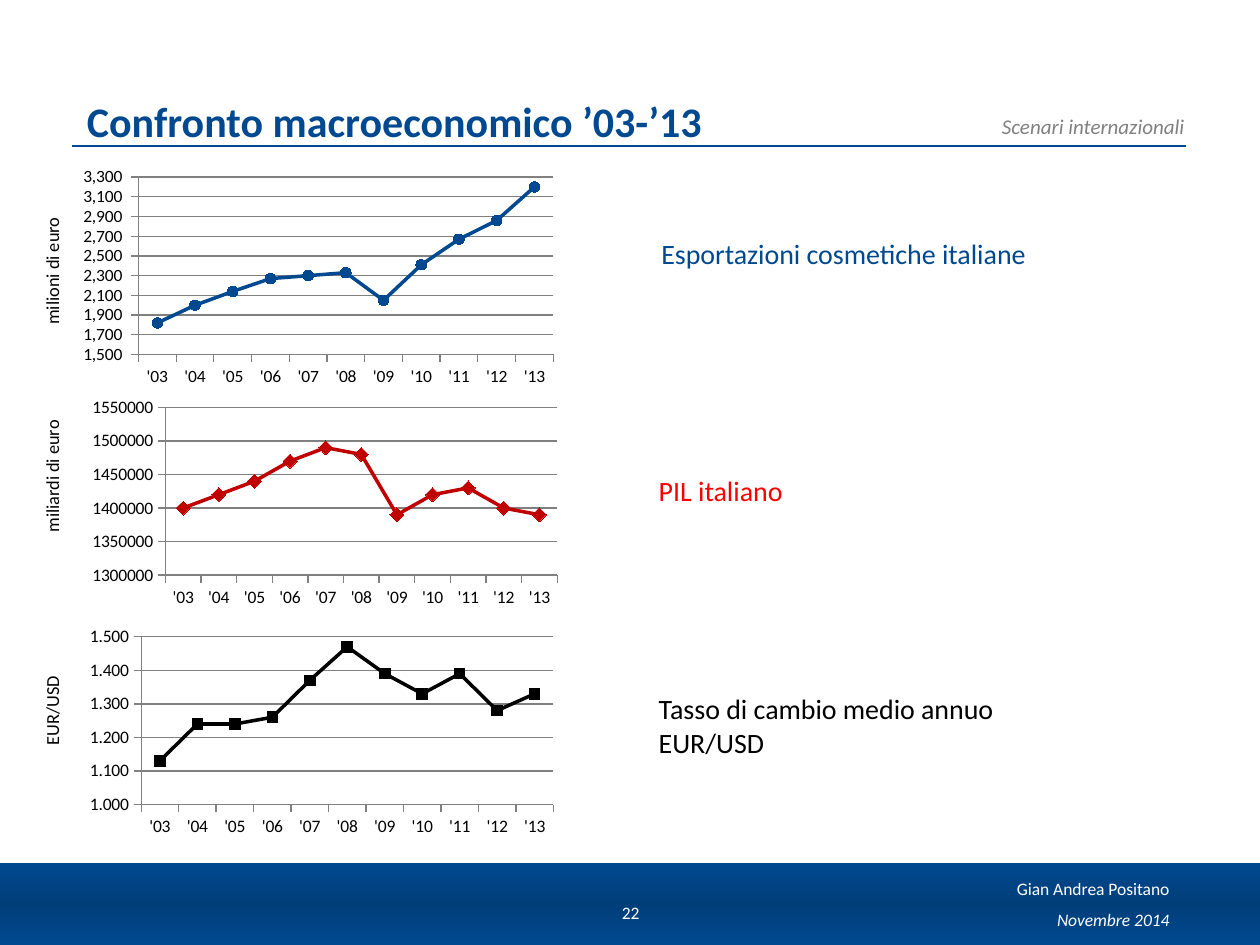
"""Build the slide comparing exports, GDP and exchange rate from 2003 to 2013."""
from copy import deepcopy

from lxml import etree
from pptx import Presentation
from pptx import util as u
from pptx.chart.data import CategoryChartData
from pptx.dml.color import RGBColor
from pptx.enum import chart as charts
from pptx.enum import shapes, text
from pptx.oxml.ns import qn

BLUE = RGBColor(0x00, 0x49, 0x90)
DEEP_BLUE = RGBColor(0x00, 0x3E, 0x79)
GREY = RGBColor(0x80, 0x80, 0x80)
WHITE = RGBColor(0xFF, 0xFF, 0xFF)
BLACK = RGBColor(0x00, 0x00, 0x00)
RED = RGBColor(0xFF, 0x00, 0x00)
DARK_RED = RGBColor(0xC0, 0x00, 0x00)
FONT = "Calibri"
YEARS = [f"'{year:02d}" for year in range(3, 14)]
THOUSANDS = '_-* #,##0_-;\\-* #,##0_-;_-* "-"??_-;_-@_'
LEFT, CENTER, RIGHT = text.PP_ALIGN.LEFT, text.PP_ALIGN.CENTER, text.PP_ALIGN.RIGHT
TOP, MIDDLE = text.MSO_ANCHOR.TOP, text.MSO_ANCHOR.MIDDLE


def place(box):
    """Convert left, top, width and height to lengths."""
    return [u.Inches(length) for length in box]


def set_font(font, size, color, bold=False, italic=False):
    """Format a font."""
    font.name, font.size = FONT, u.Pt(size)
    font.bold, font.italic = bold, italic
    font.color.rgb = color


def add_text(slide, box, words, size, color, align=LEFT, anchor=TOP,
             italic=False, rotation=0, line_spacing=None):
    """Add a wrapped text box with one run."""
    shape = slide.shapes.add_textbox(*place(box))
    shape.rotation = rotation
    frame = shape.text_frame
    frame.word_wrap = True
    frame.vertical_anchor = anchor
    paragraph = frame.paragraphs[0]
    paragraph.alignment = align
    paragraph.line_spacing = line_spacing
    run = paragraph.add_run()
    run.text = words
    set_font(run.font, size, color, italic=italic)


def set_title(slide, words):
    """Move, fill and format the title placeholder."""
    title = slide.shapes.title
    title.left, title.top, title.width, title.height = place((0.59, 0.75, 7.99, 0.5))
    title.text_frame.vertical_anchor = TOP
    paragraph = title.text_frame.paragraphs[0]
    paragraph.alignment = LEFT
    paragraph.line_spacing = 0.9
    run = paragraph.add_run()
    run.text = words
    set_font(run.font, 24, BLUE, bold=True)


def add_rule(slide):
    """Add the line under the title."""
    start_x, end_x, y = u.Inches(0.57), u.Inches(9.41), u.Inches(1.16)
    rule = slide.shapes.add_connector(shapes.MSO_CONNECTOR.STRAIGHT, start_x, y, end_x, y)
    rule.line.color.rgb = BLUE
    rule.line.width = u.Pt(0.75)
    etree.SubElement(rule._element.spPr, qn("a:effectLst"))


def add_footer_band(slide):
    """Add the footer band with its three-stop gradient."""
    box = place((-0.19, 6.85, 10.3, 0.65))
    band = slide.shapes.add_shape(shapes.MSO_SHAPE.RECTANGLE, *box)
    band.shadow.inherit = False
    band.line.fill.background()
    band.fill.gradient()
    band.fill.gradient_angle = 270
    stops = band._element.spPr.find(".//" + qn("a:gsLst"))
    stops.append(deepcopy(stops[-1]))
    for stop, position, color in zip(band.fill.gradient_stops, (0, 0.5, 1),
                                     (BLUE, DEEP_BLUE, BLUE)):
        stop.position = position
        stop.color.rgb = color


def set_plot_area(chart, area):
    """Fix the inner plot area as fractions of the chart."""
    plot_area = chart._chartSpace.chart.plotArea
    for old in plot_area.findall(qn("c:layout")):
        plot_area.remove(old)
    layout = etree.Element(qn("c:layout"))
    manual = etree.SubElement(layout, qn("c:manualLayout"))
    settings = [("layoutTarget", "inner"), ("xMode", "edge"), ("yMode", "edge")]
    settings += zip("xywh", area)
    for name, value in settings:
        etree.SubElement(manual, qn(f"c:{name}")).set("val", str(value))
    plot_area.insert(0, layout)


def add_line_chart(slide, box, area, values, color, marker, marker_size,
                   number_format, limits):
    """Add a line chart with markers, given minimum, maximum and step."""
    data = CategoryChartData()
    data.categories = YEARS
    data.add_series("Series 1", values)
    chart = slide.shapes.add_chart(
        charts.XL_CHART_TYPE.LINE_MARKERS, *place(box), data).chart
    set_font(chart.font, 10, BLACK)
    chart.has_title = chart.has_legend = False
    chart.plots[0].vary_by_categories = False
    set_plot_area(chart, area)

    axis = chart.value_axis
    axis.minimum_scale, axis.maximum_scale, axis.major_unit = limits
    axis.has_major_gridlines = True
    axis.tick_labels.number_format = number_format
    axis.tick_labels.number_format_is_linked = False
    for line in (axis.format.line, axis.major_gridlines.format.line,
                 chart.category_axis.format.line):
        line.color.rgb = GREY
        line.width = u.Pt(0.75)

    series = chart.plots[0].series[0]
    series.smooth = False
    series.format.line.color.rgb = color
    series.format.line.width = u.Pt(2)
    series.marker.style = marker
    series.marker.size = marker_size
    series.marker.format.fill.solid()
    series.marker.format.fill.fore_color.rgb = color
    series.marker.format.line.color.rgb = color


def add_charts(slide):
    """Add the three indicators from top to bottom."""
    style = charts.XL_MARKER_STYLE
    add_line_chart(
        slide, (0.55, 1.33, 3.92, 1.76), (0.14, 0.02, 0.84, 0.82),
        (1820, 2000, 2140, 2270, 2300, 2330, 2050, 2410, 2670, 2860, 3200),
        BLUE, style.CIRCLE, 6, THOUSANDS, (1500, 3300, 200))
    add_line_chart(
        slide, (0.66, 3.13, 3.84, 1.73), (0.17, 0.06, 0.81, 0.77),
        (1400000, 1420000, 1440000, 1470000, 1490000, 1480000,
         1390000, 1420000, 1430000, 1400000, 1390000),
        DARK_RED, style.DIAMOND, 8, "0", (1300000, 1550000, 50000))
    add_line_chart(
        slide, (0.62, 4.95, 3.85, 1.73), (0.13, 0.06, 0.85, 0.77),
        (1.13, 1.24, 1.24, 1.26, 1.37, 1.47, 1.39, 1.33, 1.39, 1.28, 1.33),
        BLACK, style.SQUARE, 6, "0.000", (1, 1.5, 0.1))


def add_labels(slide):
    """Add the chart captions and the rotated axis units."""
    for box, words, color in (
            ((5.15, 1.83, 3.63, 0.37), "Esportazioni cosmetiche italiane", BLUE),
            ((5.13, 3.71, 3.63, 0.37), "PIL italiano", RED),
            ((5.13, 5.44, 3.63, 0.64), "Tasso di cambio medio annuo EUR/USD", BLACK)):
        add_text(slide, box, words, 16, color)
    for top, words, align in ((1.94, "milioni di euro", LEFT),
                              (3.59, "miliardi di euro", LEFT),
                              (5.5, "EUR/USD", CENTER)):
        add_text(slide, (-0.18, top, 1.19, 0.28), words, 10.5, BLACK,
                 align, rotation=270)


def main():
    """Build and save the slide."""
    presentation = Presentation()
    presentation.slide_width, presentation.slide_height = u.Inches(10), u.Inches(7.5)
    slide = presentation.slides.add_slide(presentation.slide_layouts[5])
    add_rule(slide)
    add_text(slide, (6.1, 0.85, 3.4, 0.3), "Scenari internazionali", 12, GREY,
             RIGHT, italic=True)
    add_footer_band(slide)
    add_text(slide, (7.86, 7.19, 1.52, 0.21), "Novembre 2014", 10, WHITE,
             RIGHT, MIDDLE, italic=True)
    add_text(slide, (7.85, 6.94, 1.53, 0.31), "Gian Andrea Positano", 10, WHITE,
             RIGHT, line_spacing=0.9)
    add_text(slide, (4.72, 7.04, 0.57, 0.4), "22", 10, WHITE, CENTER, MIDDLE)
    set_title(slide, "Confronto macroeconomico ’03-’13")
    add_charts(slide)
    add_labels(slide)
    presentation.save("out.pptx")


if __name__ == "__main__":
    main()
